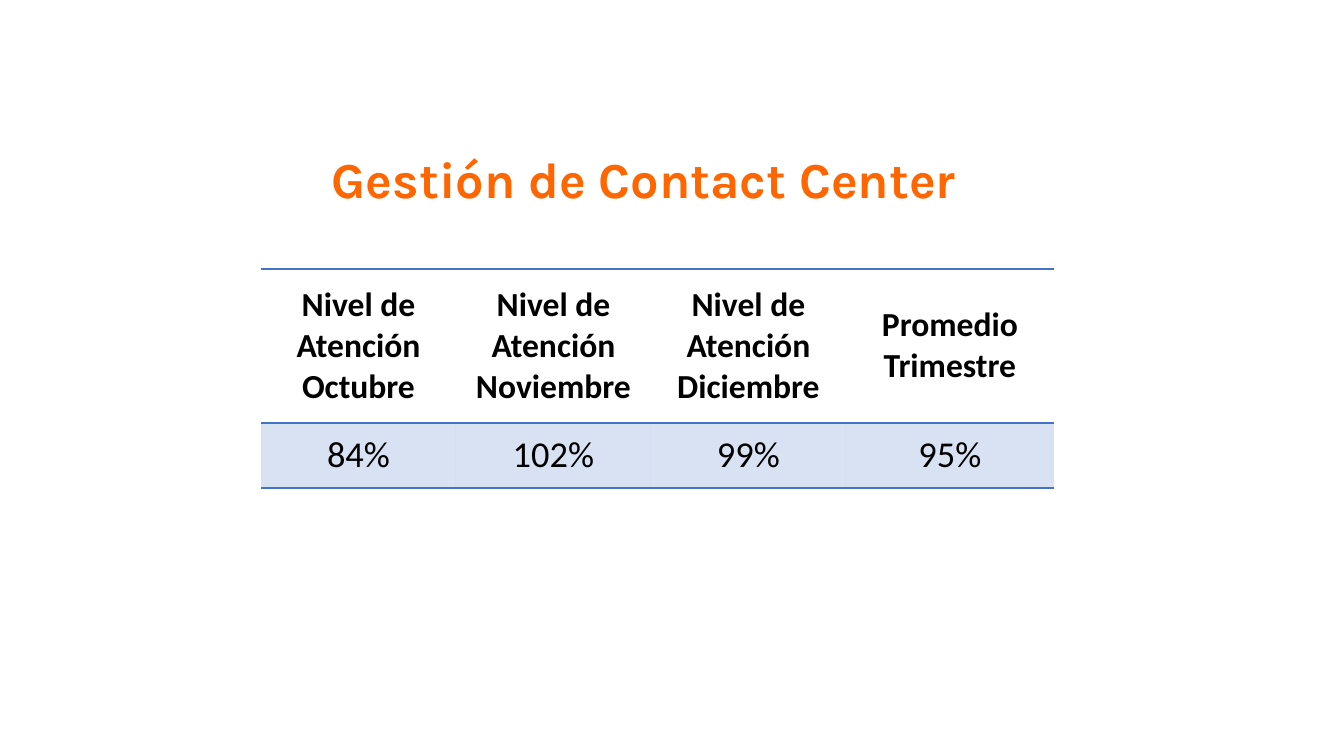
from dataclasses import dataclass

from pptx import Presentation
from pptx.dml.color import RGBColor
from pptx.enum.text import MSO_ANCHOR as Anchor, MSO_AUTO_SIZE as AutoSize, PP_ALIGN as Align
from pptx.oxml.ns import qn
from pptx.util import Pt
from lxml.etree import SubElement, Element

EMU_PER_PX = 12192000 / 1344


def px(length):
    return round(length * EMU_PER_PX)


@dataclass(frozen=True)
class Theme:
    orange: str = "FF6600"
    blue: str = "4472C4"
    black: str = "000000"
    title_font: str = "Karla"
    body_font: str = "Calibri"
    title_size: int = 36
    header_size: int = 24
    value_size: int = 26
    border_width: int = 1
    tint_percent: int = 20


def write(frame, text, *, font, size, color, bold=False, align=Align.LEFT):
    para = frame.paragraphs[0]
    para.alignment = align
    span = para.add_run()
    span.text = text
    span.font.name = font
    span.font.size = Pt(size)
    span.font.bold = bold
    span.font.color.rgb = RGBColor.from_string(color)


class SlideBuilder:
    """Draws themed elements on the current slide."""

    def __init__(self, page, theme):
        self.page = page
        self.theme = theme

    def title(self, text, left, top, width, height):
        box = self.page.shapes.add_textbox(*map(px, (left, top, width, height)))
        frame = box.text_frame
        frame.word_wrap = False
        frame.auto_size = AutoSize.SHAPE_TO_FIT_TEXT
        write(frame, text, font=self.theme.title_font, size=self.theme.title_size,
              color=self.theme.orange, bold=True)

    def table(self, rows, left, top, widths, heights):
        area = (left, top, sum(widths), sum(heights))
        table = self.page.shapes.add_table(len(rows), len(widths), *map(px, area)).table
        table.first_row = True
        table.horz_banding = False
        for column, width in zip(table.columns, widths):
            column.width = px(width)
        for row, height in zip(table.rows, heights):
            row.height = px(height)
        for row_index, values in enumerate(rows):
            for column_index, value in enumerate(values):
                self.cell(table.cell(row_index, column_index), value, header=row_index == 0)

    def cell(self, cell, text, header):
        theme = self.theme
        cell.margin_left = cell.margin_right = px(15)
        cell.margin_top = cell.margin_bottom = px(7)
        cell.vertical_anchor = Anchor.MIDDLE
        write(cell.text_frame, text, font=theme.body_font,
              size=theme.header_size if header else theme.value_size,
              color=theme.black, bold=header, align=Align.CENTER)
        self.borders(cell)
        if header:
            cell.fill.background()
        else:
            self.tint(cell)

    def borders(self, cell):
        properties = cell._tc.get_or_add_tcPr()
        for position, side in enumerate(("lnL", "lnR", "lnT", "lnB")):
            line = Element(qn(f"a:{side}"), w=str(Pt(self.theme.border_width)))
            if side in ("lnT", "lnB"):
                fill = SubElement(line, qn("a:solidFill"))
                SubElement(fill, qn("a:srgbClr"), val=self.theme.blue)
            else:
                SubElement(line, qn("a:noFill"))
            properties.insert(position, line)

    def tint(self, cell):
        cell.fill.solid()
        cell.fill.fore_color.rgb = RGBColor.from_string(self.theme.blue)
        color = cell._tc.tcPr.find(f"{qn('a:solidFill')}/{qn('a:srgbClr')}")
        SubElement(color, qn("a:alpha"), val=str(self.theme.tint_percent * 1000))


def main():
    deck = Presentation()
    deck.slide_width, deck.slide_height = px(1344), px(756)
    page = deck.slides.add_slide(deck.slide_layouts[6])
    builder = SlideBuilder(page, Theme())
    builder.title("Gestión de Contact Center", 322, 143, 671, 71)
    months = ("Octubre", "Noviembre", "Diciembre")
    headers = [f"Nivel de Atención {month}" for month in months] + ["Promedio Trimestre"]
    builder.table([headers, ["84%", "102%", "99%", "95%"]], 261, 269,
                  widths=[195, 195, 195, 208], heights=[154, 65])
    deck.save("out.pptx")


if __name__ == "__main__":
    main()
